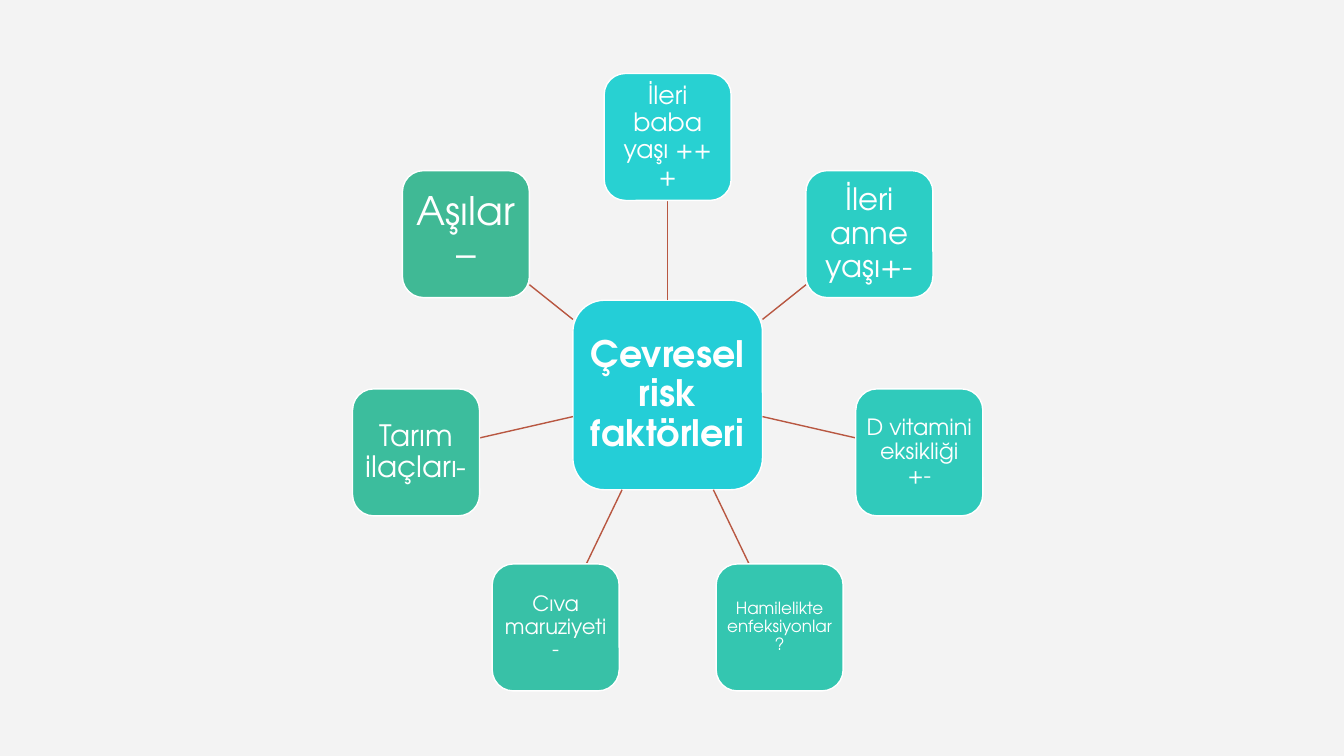
"""Build a radial diagram of environmental risk factors around a central hub."""
from dataclasses import dataclass
from math import cos, radians, sin

from lxml.etree import SubElement
from pptx import Presentation
from pptx.dml.color import RGBColor
from pptx.enum.shapes import MSO_CONNECTOR, MSO_SHAPE
from pptx.enum.text import MSO_ANCHOR, PP_ALIGN
from pptx.oxml.ns import qn
from pptx.shapes.autoshape import Shape
from pptx.slide import Slide
from pptx.util import Inches, Pt

WIDTH, HEIGHT = Inches(13.33), Inches(7.5)
ROW = HEIGHT / 100
MID_X, MID_Y = 88.3, 52.25
ORBIT = 34.13
HUB_SIDE, NODE_SIDE = 25.07, 16.8
FONT = "TeX Gyre Adventor"

PAPER = RGBColor(0xF3, 0xF3, 0xF3)
WHITE = RGBColor(0xFF, 0xFF, 0xFF)
RUST = RGBColor(0xB8, 0x57, 0x41)
CYAN = RGBColor(0x24, 0xCE, 0xD7)
AQUA = RGBColor(0x28, 0xD1, 0xD2)
TEAL = RGBColor(0x2C, 0xCE, 0xC5)
MINT = RGBColor(0x30, 0xCA, 0xBB)
JADE = RGBColor(0x34, 0xC6, 0xB0)
SEA = RGBColor(0x38, 0xC1, 0xA7)
FERN = RGBColor(0x3C, 0xBD, 0x9D)
LEAF = RGBColor(0x40, 0xB9, 0x95)


@dataclass(frozen=True)
class Node:
    text: str
    size: int
    fill: RGBColor
    side: float = NODE_SIDE
    bold: bool = False


HUB = Node("Çevresel risk faktörleri", 26, CYAN, HUB_SIDE, True)
FACTORS = [
    Node("İleri baba yaşı +++", 18, AQUA),
    Node("İleri anne yaşı+-", 22, TEAL),
    Node("D vitamini eksikliği +-", 16, MINT),
    Node("Hamilelikte enfeksiyonlar ?", 12, JADE),
    Node("Cıva maruziyeti-", 15, SEA),
    Node("Tarım ilaçları-", 21, FERN),
    Node("Aşılar –", 28, LEAF),
]


def grid(count: float) -> int:
    return round(count * ROW)


def write(shape: Shape, text: str, *, size: int, bold: bool = False) -> None:
    frame = shape.text_frame
    frame.word_wrap = True
    frame.vertical_anchor = MSO_ANCHOR.MIDDLE
    frame.margin_left = frame.margin_right = Pt(size * 0.2)
    frame.margin_top = frame.margin_bottom = Pt(size * 0.2)
    line = frame.paragraphs[0]
    line.alignment = PP_ALIGN.CENTER
    line.line_spacing = 0.9
    run = line.add_run()
    run.text = text
    run.font.name = FONT
    run.font.size = Pt(size)
    run.font.bold = bold
    run.font.color.rgb = WHITE


def draw_node(slide: Slide, node: Node, x: float, y: float) -> None:
    half = node.side / 2
    box = slide.shapes.add_shape(
        MSO_SHAPE.ROUNDED_RECTANGLE,
        grid(x - half), grid(y - half), grid(node.side), grid(node.side),
    )
    box.shadow.inherit = False
    box.fill.solid()
    box.fill.fore_color.rgb = node.fill
    box.line.color.rgb = WHITE
    box.line.width = Pt(1)
    write(box, node.text, size=node.size, bold=node.bold)


def draw_spoke(slide: Slide, dx: float, dy: float) -> None:
    reach = max(abs(dx), abs(dy))
    start = HUB_SIDE / 2 / reach
    end = ORBIT - NODE_SIDE / 2 / reach
    spoke = slide.shapes.add_connector(
        MSO_CONNECTOR.STRAIGHT,
        grid(MID_X + start * dx), grid(MID_Y + start * dy),
        grid(MID_X + end * dx), grid(MID_Y + end * dy),
    )
    spoke.line.color.rgb = RUST
    spoke.line.width = Pt(1)
    SubElement(spoke._element.spPr, qn("a:effectLst"))


def main() -> None:
    deck = Presentation()
    deck.slide_width, deck.slide_height = WIDTH, HEIGHT
    slide = deck.slides.add_slide(deck.slide_layouts[6])
    slide.background.fill.solid()
    slide.background.fill.fore_color.rgb = PAPER

    draw_node(slide, HUB, MID_X, MID_Y)
    for index, node in enumerate(FACTORS):
        angle = radians(360 * index / len(FACTORS) - 90)
        dx, dy = cos(angle), sin(angle)
        draw_spoke(slide, dx, dy)
        draw_node(slide, node, MID_X + ORBIT * dx, MID_Y + ORBIT * dy)
    deck.save("out.pptx")


if __name__ == "__main__":
    main()
